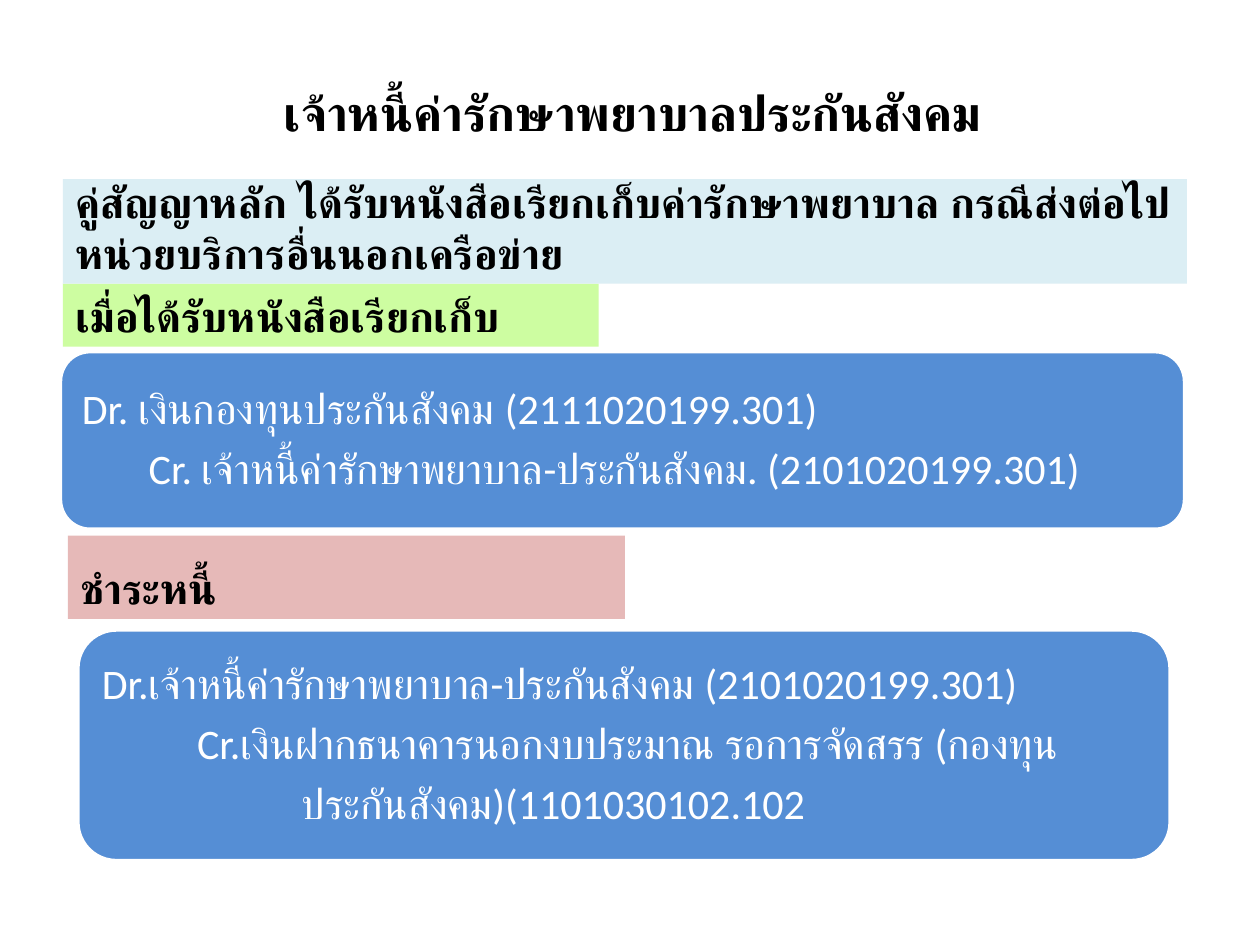
from pptx import Presentation
from pptx.dml.color import RGBColor
from pptx.enum.shapes import MSO_SHAPE as Shape
from pptx.enum.text import MSO_ANCHOR as Anchor, PP_ALIGN as Align
from pptx.util import Cm, Pt

BLACK, WHITE, BLUE = "000000", "FFFFFF", "558ED5"


def colour(value):
    return RGBColor.from_string(value)


def write(para, text, size=24, ink=BLACK, bold=False, align=Align.LEFT,
          indent=0, spacing=1.0, after=0):
    para.alignment = align
    para.line_spacing = spacing
    para.space_after = Pt(after)
    if indent:
        para._p.get_or_add_pPr().set("marL", str(Cm(indent)))
    span = para.add_run()
    span.text = text
    span.font.name = "Calibri"
    span.font.size = Pt(size)
    span.font.bold = bold
    span.font.color.rgb = colour(ink)


class LedgerSlide:
    """Holds the current page and draws its title, heading bands and entry cards."""

    def __init__(self, page):
        self.page = page

    def shape(self, kind, place, fill, line=None):
        item = self.page.shapes.add_shape(kind, *map(Cm, place))
        item.shadow.inherit = False
        item.fill.solid()
        item.fill.fore_color.rgb = colour(fill)
        if line:
            item.line.color.rgb = colour(line)
            item.line.width = Pt(2)
        else:
            item.line.fill.background()
        return item

    def text_box(self, place):
        box = self.page.shapes.add_textbox(*map(Cm, place))
        box.text_frame.word_wrap = True
        box.text_frame.vertical_anchor = Anchor.MIDDLE
        return box.text_frame

    def title(self, text, place):
        frame = self.text_box(place)
        write(frame.paragraphs[0], text, size=28, bold=True, align=Align.CENTER)

    def band(self, text, place, fill):
        frame = self.shape(Shape.RECTANGLE, place, fill).text_frame
        frame.word_wrap = True
        frame.vertical_anchor = Anchor.BOTTOM
        write(frame.paragraphs[0], text, bold=True)

    def card(self, entries, place):
        self.shape(Shape.ROUNDED_RECTANGLE, place, BLUE, line=WHITE)
        left, top, width, height = place
        inset = height * 0.05
        frame = self.text_box((left + inset, top + inset,
                               width - 2 * inset, height - 2 * inset))
        frame.margin_left = frame.margin_right = Cm(0.25)
        frame.margin_top = frame.margin_bottom = Cm(0.25)
        for number, (text, indent) in enumerate(entries):
            para = frame.add_paragraph() if number else frame.paragraphs[0]
            write(para, text, ink=WHITE, indent=indent, spacing=0.9, after=8.4)


def main():
    deck = Presentation()
    deck.slide_width, deck.slide_height = Cm(25.4), Cm(19.05)
    slide = LedgerSlide(deck.slides.add_slide(deck.slide_layouts[6]))

    slide.title("เจ้าหนี้ค่ารักษาพยาบาลประกันสังคม", (1.32, 1.27, 22.86, 1.98))
    slide.band("เมื่อได้รับหนังสือเรียกเก็บ", (1.27, 5.72, 10.8, 1.27), "CDFDA1")
    slide.card([
        ("Dr. เงินกองทุนประกันสังคม (2111020199.301)", 0),
        ("Cr. เจ้าหนี้ค่ารักษาพยาบาล-ประกันสังคม. (2101020199.301)", 1.35),
    ], (1.22, 7.09, 22.66, 3.58))
    slide.band("ชำระหนี้", (1.37, 10.8, 11.23, 1.68), "E6B9B8")
    slide.card([
        ("Dr.เจ้าหนี้ค่ารักษาพยาบาล-ประกันสังคม (2101020199.301)", 0),
        ("Cr.เงินฝากธนาคารนอกงบประมาณ รอการจัดสรร (กองทุน", 1.92),
        ("ประกันสังคม)(1101030102.102", 4.03),
    ], (1.57, 12.7, 22.02, 4.65))
    slide.band("คู่สัญญาหลัก ได้รับหนังสือเรียกเก็บค่ารักษาพยาบาล "
               "กรณีส่งต่อไปหน่วยบริการอื่นนอกเครือข่าย",
               (1.27, 3.61, 22.66, 2.11), "DBEEF4")

    deck.save("out.pptx")


if __name__ == "__main__":
    main()
